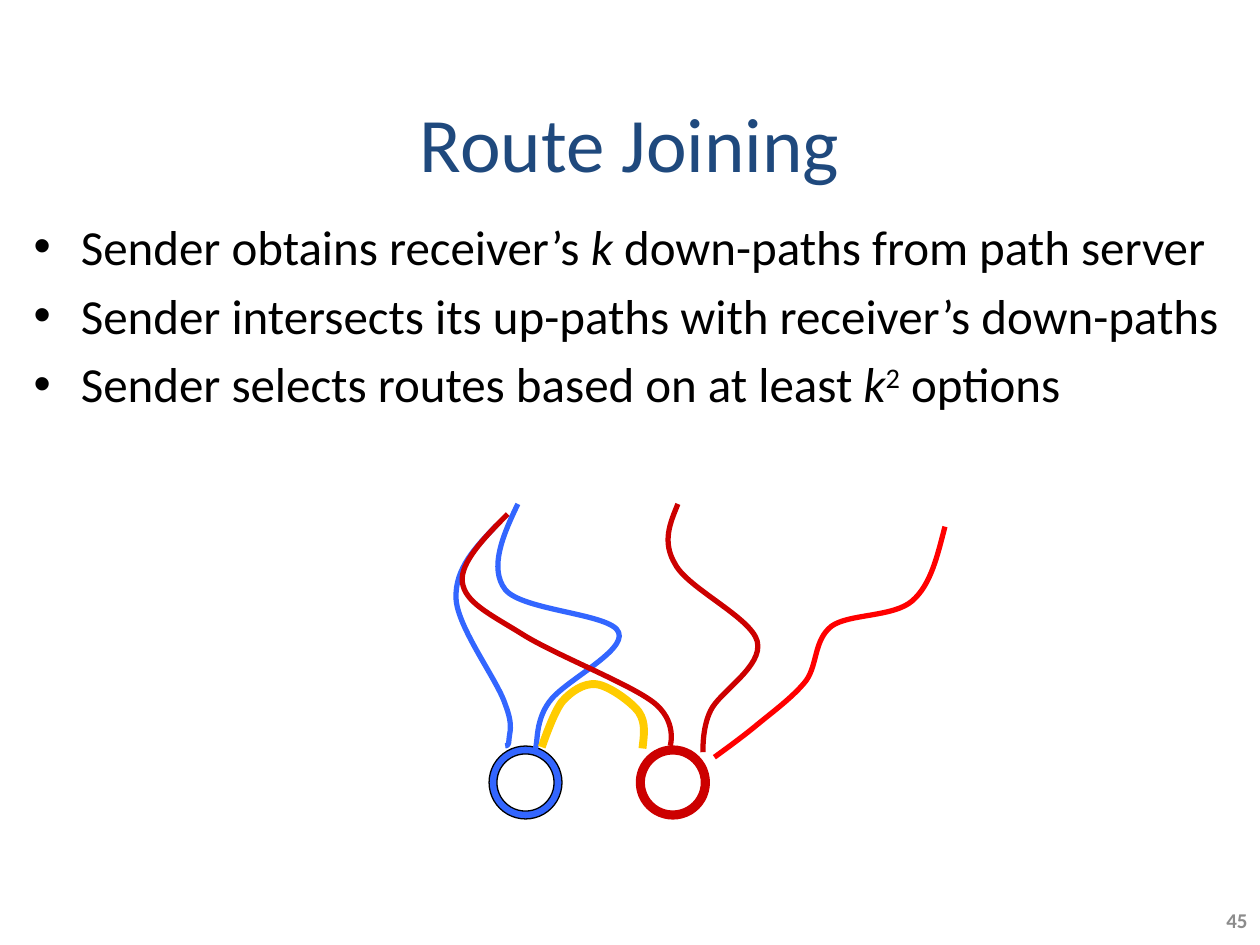
"""Build the Route Joining slide with its up-path and down-path diagram."""
from lxml import etree
from pptx import Presentation
from pptx.dml.color import RGBColor
from pptx.enum.shapes import MSO_SHAPE
from pptx.enum.text import MSO_ANCHOR, PP_ALIGN
from pptx.oxml.ns import qn
from pptx.util import Cm, Pt

DONUT = MSO_SHAPE.DONUT
MIDDLE = MSO_ANCHOR.MIDDLE
CENTER, LEFT, RIGHT = PP_ALIGN.CENTER, PP_ALIGN.LEFT, PP_ALIGN.RIGHT

NAVY = RGBColor(0x1F, 0x49, 0x7D)
BLACK = RGBColor(0x00, 0x00, 0x00)
GRAY = RGBColor(0x8C, 0x8C, 0x8C)
BLUE = RGBColor(0x33, 0x66, 0xFF)
DARK_RED = RGBColor(0xCC, 0x00, 0x00)
RED = RGBColor(0xFF, 0x00, 0x00)
YELLOW = RGBColor(0xFF, 0xCC, 0x00)

CURVE_UNIT = Cm(0.0254)

BULLETS = [
    [("Sender obtains receiver’s ", {}), ("k", {"italic": True}),
     (" down-paths from path server", {})],
    [("Sender intersects its up-paths with receiver’s down-paths", {})],
    [("Sender selects routes based on at least ", {}), ("k", {"italic": True}),
     ("2", {"superscript": True}), (" options", {})],
]

NODES = [(Cm(9.86), BLUE, BLACK), (Cm(12.83), DARK_RED, DARK_RED)]

ROUTES = [
    (BLUE, 3, [(394, 417), (378, 434), (361, 451), (362, 475),
               (363, 498), (395, 540), (401, 559),
               (408, 577), (404, 582), (404, 587),
               (404, 593), (401, 592), (401, 592)]),
    (BLUE, 3, [(411, 400), (399, 425), (388, 451), (401, 468),
               (415, 485), (486, 487), (491, 502),
               (497, 517), (447, 541), (436, 557),
               (425, 572), (427, 588), (425, 594),
               (423, 600), (424, 594), (424, 594)]),
    (DARK_RED, 3, [(403, 408), (384, 427), (365, 447), (367, 462),
                   (369, 478), (388, 487), (414, 503),
                   (439, 519), (498, 542), (518, 557),
                   (538, 572), (532, 592), (532, 592)]),
    (DARK_RED, 3, [(538, 400), (532, 415), (525, 430), (536, 448),
                   (546, 467), (596, 490), (601, 509),
                   (606, 529), (571, 549), (564, 564),
                   (557, 578), (558, 597), (558, 597)]),
    (YELLOW, 4.5, [(510, 594), (511, 584), (513, 574), (507, 565),
                   (501, 557), (483, 544), (473, 543),
                   (463, 542), (453, 549), (446, 557),
                   (439, 566), (430, 593), (430, 593)]),
    (RED, 3, [(750, 418), (744, 441), (739, 464), (724, 477),
              (709, 490), (674, 487), (660, 497),
              (646, 508), (649, 527), (640, 540),
              (630, 553), (612, 566), (600, 576),
              (588, 586), (567, 601), (567, 601)]),
]


def add_run(paragraph, text, color, size, superscript=False, **formats):
    """Append a Calibri run to the paragraph."""
    run = paragraph.add_run()
    run.text = text
    run.font.color.rgb = color
    for name, value in {"name": "Calibri", "size": Pt(size), **formats}.items():
        setattr(run.font, name, value)
    if superscript:
        run.font._element.set("baseline", "30000")


def add_curve(shapes, points):
    """Add a freeform whose points are Bézier controls, three to a segment."""
    builder = shapes.build_freeform(*points[0], scale=CURVE_UNIT)
    builder.add_line_segments(points[1:], close=False)
    curve = builder.convert_to_shape()
    outline = next(curve._element.iter(qn("a:path")))
    segments = outline.findall(qn("a:lnTo"))
    for start in range(0, len(segments), 3):
        bezier = etree.SubElement(outline, qn("a:cubicBezTo"))
        for segment in segments[start:start + 3]:
            bezier.append(segment[0])
            outline.remove(segment)
    return curve


presentation = Presentation()
presentation.slide_width, presentation.slide_height = Cm(25.4), Cm(19.05)
slide = presentation.slides.add_slide(presentation.slide_layouts[5])
shapes = slide.shapes

title = shapes.title
title.left, title.top, title.width, title.height = Cm(1.9), Cm(1.27), Cm(21.6), Cm(3.18)
title.text_frame.vertical_anchor = MIDDLE
title_paragraph = title.text_frame.paragraphs[0]
title_paragraph.alignment = CENTER
add_run(title_paragraph, "Route Joining", NAVY, 44)

body = shapes.add_textbox(Cm(0.43), Cm(4.24), Cm(24.77), Cm(12.07)).text_frame
body.word_wrap = True
for index, runs in enumerate(BULLETS):
    paragraph = body.add_paragraph() if index else body.paragraphs[0]
    paragraph.alignment = LEFT
    paragraph.space_before = Pt(5.6)
    properties = paragraph._p.get_or_add_pPr()
    properties.set("marL", str(Cm(0.95)))
    properties.set("indent", str(Cm(-0.95)))
    etree.SubElement(properties, qn("a:buFont"), typeface="Arial")
    etree.SubElement(properties, qn("a:buChar"), char="•")
    for text, formats in runs:
        add_run(paragraph, text, BLACK, 28, **formats)

number = shapes.add_textbox(Cm(23.65), Cm(18.03), Cm(1.75), Cm(1.02)).text_frame
number.word_wrap = True
number.vertical_anchor = MIDDLE
number.paragraphs[0].alignment = RIGHT
add_run(number.paragraphs[0], "45", GRAY, 12, bold=True)

for left, fill_color, line_color in NODES:
    node = shapes.add_shape(DONUT, left, Cm(15.04), Cm(1.47), Cm(1.47))
    node.adjustments[0] = 0.108
    node.shadow.inherit = False
    node.fill.solid()
    node.fill.fore_color.rgb = fill_color
    node.line.color.rgb = line_color
    node.line.width = Pt(0.75)

for color, width, points in ROUTES:
    route = add_curve(shapes, points)
    route.shadow.inherit = False
    route.fill.background()
    route.line.color.rgb = color
    route.line.width = Pt(width)

presentation.save("out.pptx")
